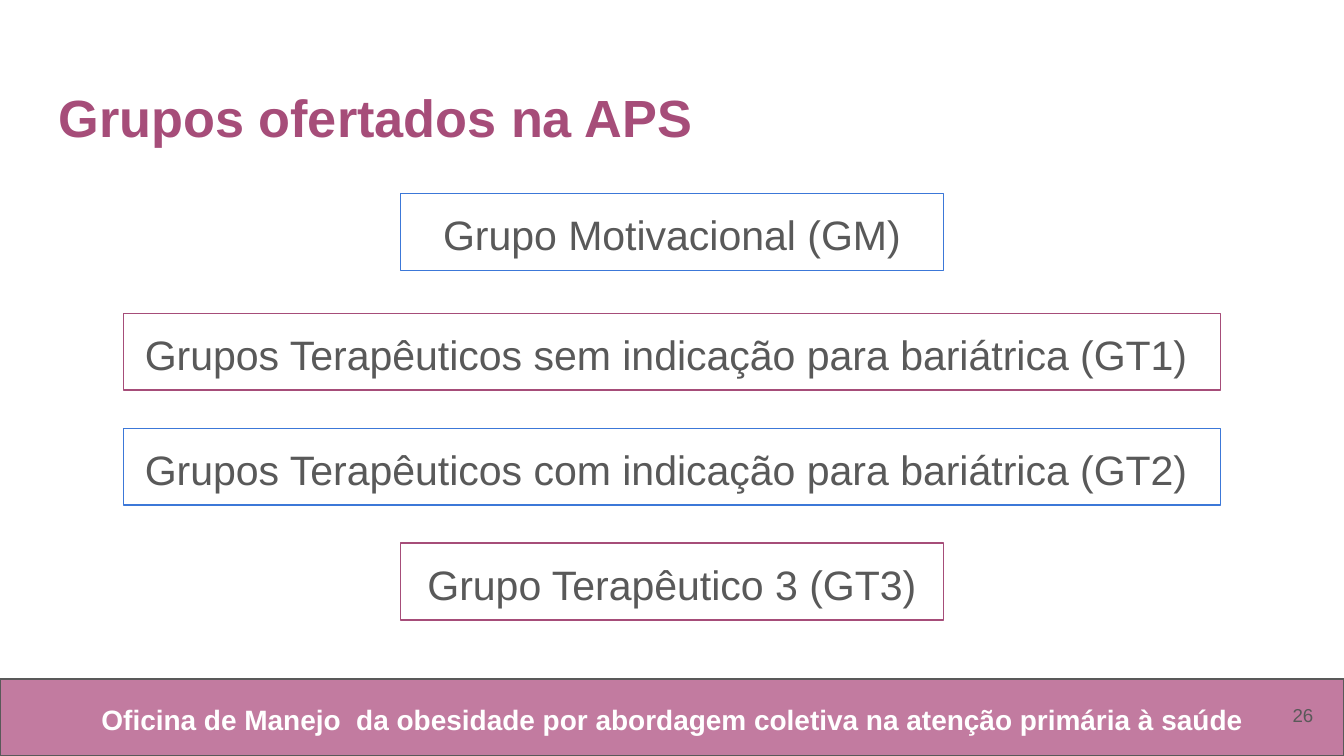
from pptx import Presentation
from pptx import util as u
from pptx.dml.color import RGBColor
from pptx.enum import shapes, text

COLORS = {"pink": "C27BA0", "plum": "A64D79", "blue": "3C78D8",
          "grey": "595959", "white": "FFFFFF"}


def rgb(name):
    return RGBColor.from_string(COLORS[name])


def write(sp, words, size, color, align, bold=False, anchor=text.MSO_ANCHOR.MIDDLE):
    tf = sp.text_frame
    tf.word_wrap = True
    tf.auto_size = text.MSO_AUTO_SIZE.NONE
    tf.vertical_anchor = anchor
    tf.margin_left = tf.margin_right = tf.margin_top = tf.margin_bottom = u.Cm(0.25)
    p = tf.paragraphs[0]
    p.text = words
    p.alignment = align
    p.line_spacing = 1.1
    p.font.name = "Arial"
    p.font.size = u.Pt(size)
    p.font.bold = bold
    p.font.color.rgb = rgb(color)


prs = Presentation()
prs.slide_width, prs.slide_height = u.Cm(25.4), u.Cm(14.28)
s = prs.slides.add_slide(prs.slide_layouts[5])
center = text.PP_ALIGN.CENTER

# Footer band
band = s.shapes.add_shape(shapes.MSO_SHAPE.RECTANGLE, 0, u.Cm(12.83),
                          prs.slide_width, u.Cm(1.45))
band.shadow.inherit = False
band.fill.solid()
band.fill.fore_color.rgb = rgb("pink")
band.line.color.rgb = rgb("grey")
band.line.width = u.Pt(0.75)

footer = s.shapes.add_textbox(u.Cm(0.86), u.Cm(12.98), u.Cm(23.7), u.Cm(1.14))
write(footer, "Oficina de Manejo  da obesidade por abordagem coletiva na atenção primária à saúde",
      15, "white", center, bold=True)

# Title
title = s.shapes.title
title.left, title.top = u.Cm(0.86), u.Cm(1.24)
title.width, title.height = u.Cm(23.67), u.Cm(1.6)
write(title, "Grupos ofertados na APS", 28, "plum", text.PP_ALIGN.LEFT,
      bold=True, anchor=text.MSO_ANCHOR.TOP)

# Group boxes, centred on the slide: words, top, width, outline
groups = [
    ("Grupo Motivacional (GM)", 3.66, 10.26, "blue"),
    ("Grupos Terapêuticos sem indicação para bariátrica (GT1) ", 5.92, 20.73, "plum"),
    ("Grupos Terapêuticos com indicação para bariátrica (GT2) ", 8.09, 20.73, "blue"),
    ("Grupo Terapêutico 3 (GT3)", 10.26, 10.26, "plum"),
]
for words, top, width, outline in groups:
    sp = s.shapes.add_shape(shapes.MSO_SHAPE.RECTANGLE, u.Cm((25.4 - width) / 2),
                            u.Cm(top), u.Cm(width), u.Cm(1.45))
    sp.shadow.inherit = False
    sp.fill.background()
    sp.line.color.rgb = rgb(outline)
    sp.line.width = u.Pt(0.75)
    write(sp, words, 22, "grey", center)

# Page number
number = s.shapes.add_textbox(u.Cm(23.55), u.Cm(12.95), u.Cm(1.52), u.Cm(1.09))
write(number, "26", 10, "grey", text.PP_ALIGN.RIGHT)

prs.save("out.pptx")
